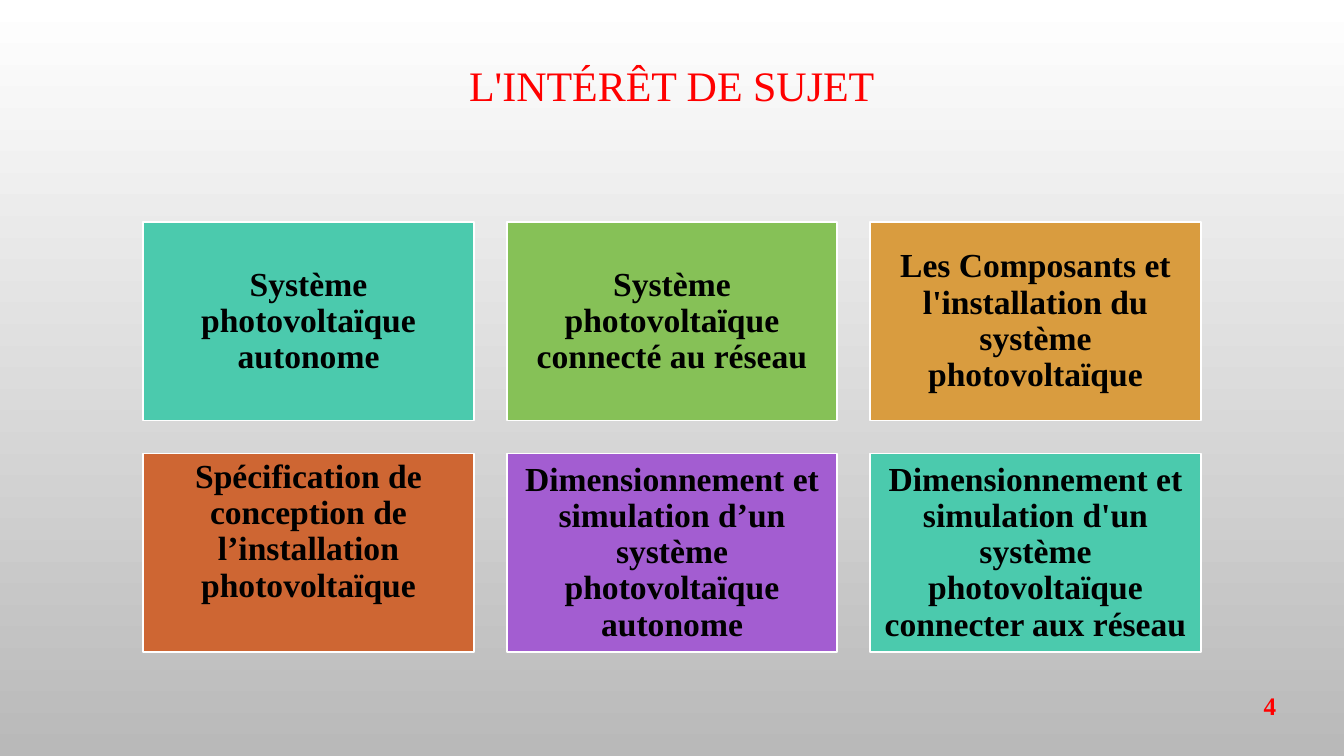
from pptx import Presentation
from pptx.dml.color import RGBColor
from pptx.enum.shapes import MSO_SHAPE
from pptx.enum.text import MSO_ANCHOR, PP_ALIGN
from pptx.util import Cm, Pt

RECT = MSO_SHAPE.RECTANGLE
MIDDLE = MSO_ANCHOR.MIDDLE
CENTER, RIGHT = PP_ALIGN.CENTER, PP_ALIGN.RIGHT

FONT = "Times New Roman"
RED, BLACK, WHITE = "FF0000", "000000", "FFFFFF"
BACKGROUND = [(0, "FFFFFF"), (1, "B9B9B9")]
TITLE = "L'INTÉRÊT DE SUJET"
PAGE = "4"
INSET = 0.25
TOPICS = [
    ("Système photovoltaïque autonome", "4BCAAD", INSET),
    ("Système photovoltaïque connecté au réseau", "86C157", INSET),
    ("Les Composants et l'installation du système photovoltaïque", "D99C3F", INSET),
    ("Spécification de conception de l’installation photovoltaïque", "CE6633", 1.3),
    ("Dimensionnement et simulation d’un système photovoltaïque autonome", "A35DD1", INSET),
    ("Dimensionnement et simulation d'un système photovoltaïque connecter aux réseau",
     "4BCAAD", INSET),
]
COLUMNS = 3
LEFT, TOP = 3.61, 5.6
CARD_W, CARD_H = 8.33, 5.0
GAP = 0.83


def rgb(value):
    return RGBColor.from_string(value)


def write(shape, text, size, color, bold=False, align=CENTER, spacing=0.9):
    tf = shape.text_frame
    tf.word_wrap = True
    tf.vertical_anchor = MIDDLE
    p = tf.paragraphs[0]
    p.text = text
    p.alignment = align
    p.line_spacing = spacing
    p.font.name = FONT
    p.font.size = Pt(size)
    p.font.bold = bold
    p.font.color.rgb = rgb(color)
    return tf


def add_card(s, index, text, color, bottom):
    row, col = divmod(index, COLUMNS)
    card = s.shapes.add_shape(RECT, Cm(LEFT + col * (CARD_W + GAP)),
                              Cm(TOP + row * (CARD_H + GAP)), Cm(CARD_W), Cm(CARD_H))
    card.shadow.inherit = False
    card.fill.solid()
    card.fill.fore_color.rgb = rgb(color)
    card.line.color.rgb = rgb(WHITE)
    card.line.width = Pt(1.25)
    tf = write(card, text, 24, BLACK, bold=True)
    tf.margin_left = tf.margin_right = tf.margin_top = Cm(INSET)
    tf.margin_bottom = Cm(bottom)


def main():
    prs = Presentation()
    prs.slide_width, prs.slide_height = Cm(33.87), Cm(19.05)
    s = prs.slides.add_slide(prs.slide_layouts[6])

    fill = s.background.fill
    fill.gradient()
    fill.gradient_angle = 270
    for stop, (position, color) in zip(fill.gradient_stops, BACKGROUND):
        stop.position = position
        stop.color.rgb = rgb(color)

    title = s.shapes.add_textbox(Cm(2.54), Cm(0), Cm(28.79), Cm(4.45))
    write(title, TITLE, 30, RED)
    for index, topic in enumerate(TOPICS):
        add_card(s, index, *topic)
    page = s.shapes.add_textbox(Cm(30.28), Cm(17.27), Cm(2.13), Cm(1.02))
    write(page, PAGE, 18, RED, bold=True, align=RIGHT, spacing=1.0)

    prs.save("out.pptx")


if __name__ == "__main__":
    main()
